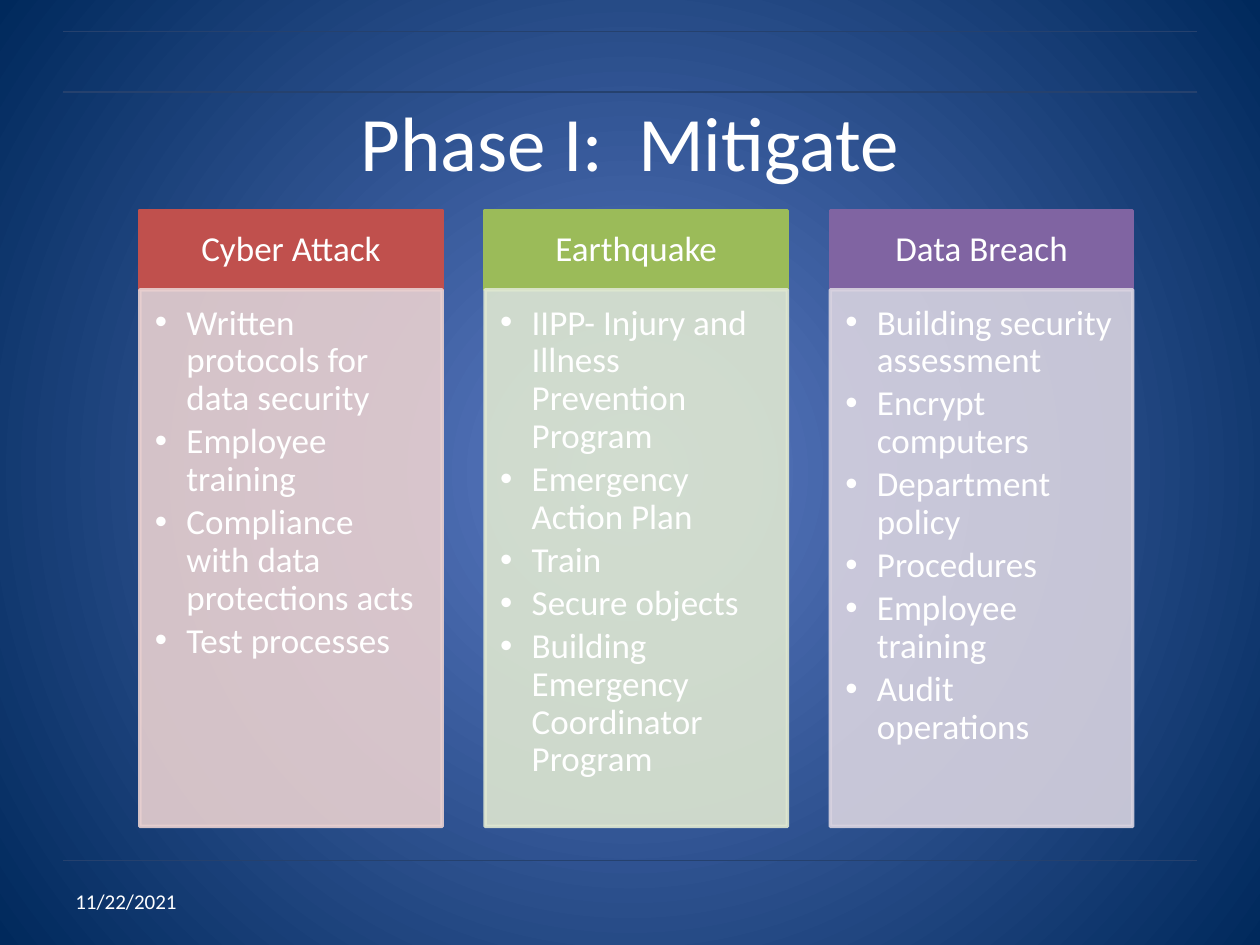
from lxml.etree import SubElement
from pptx import Presentation
from pptx.dml.color import RGBColor
from pptx.enum.shapes import MSO_CONNECTOR, MSO_SHAPE
from pptx.enum.text import MSO_ANCHOR, PP_ALIGN
from pptx.oxml.ns import qn
from pptx.util import Inches, Pt

WHITE = "FFFFFF"
RULE_COLOR = "25416E"
HAZARDS = [
    ("Cyber Attack", "C0504D", "E8D0D0", [
        "Written protocols for data security",
        "Employee training",
        "Compliance with data protections acts",
        "Test processes",
    ]),
    ("Earthquake", "9BBB59", "DEE7D1", [
        "IIPP- Injury and Illness Prevention Program",
        "Emergency Action Plan",
        "Train",
        "Secure objects",
        "Building Emergency Coordinator Program",
    ]),
    ("Data Breach", "8064A2", "D8D3E0", [
        "Building security assessment",
        "Encrypt computers",
        "Department policy",
        "Procedures",
        "Employee training",
        "Audit operations",
    ]),
]


def rgb(color):
    return RGBColor.from_string(color)


def set_font(paragraph, size):
    paragraph.font.name = "Calibri"
    paragraph.font.size = Pt(size)
    paragraph.font.color.rgb = rgb(WHITE)


def set_insets(frame, left, top, right, bottom):
    frame.margin_left, frame.margin_top = Inches(left), Inches(top)
    frame.margin_right, frame.margin_bottom = Inches(right), Inches(bottom)


def add_bullet(paragraph, indent):
    properties = paragraph._p.get_or_add_pPr()
    properties.set("marL", str(Inches(indent)))
    properties.set("indent", str(-Inches(indent)))
    SubElement(properties, qn("a:buFont"), typeface="Arial")
    SubElement(properties, qn("a:buChar"), char="•")


def paint_background(slide):
    fill = slide.background.fill
    fill.gradient()
    for stop, color in zip(fill.gradient_stops, ["5E7CC5", "00295C"]):
        stop.color.rgb = rgb(color)
    gradient = slide.element.find(".//" + qn("a:gradFill"))
    gradient.remove(gradient.find(qn("a:lin")))
    circle = SubElement(gradient, qn("a:path"), path="circle")
    SubElement(circle, qn("a:fillToRect"), l="50000", t="50000", r="50000", b="50000")


def add_rule(slide, left, top, width):
    rule = slide.shapes.add_connector(
        MSO_CONNECTOR.STRAIGHT, Inches(left), Inches(top), Inches(left + width), Inches(top))
    rule.line.color.rgb = rgb(RULE_COLOR)
    rule.line.width = Pt(0.75)
    SubElement(rule._element.spPr, qn("a:effectLst"))


def place_title(slide, left, top, width, height):
    title = slide.shapes.title
    title.left, title.top = Inches(left), Inches(top)
    title.width, title.height = Inches(width), Inches(height)
    frame = title.text_frame
    frame.text = "Phase I:  Mitigate"
    frame.vertical_anchor = MSO_ANCHOR.MIDDLE
    heading = frame.paragraphs[0]
    heading.alignment = PP_ALIGN.CENTER
    set_font(heading, 44)


def add_panel(slide, left, top, width, height, color, opacity=100):
    panel = slide.shapes.add_shape(
        MSO_SHAPE.RECTANGLE, Inches(left), Inches(top), Inches(width), Inches(height))
    panel.shadow.inherit = False
    panel.fill.solid()
    panel.fill.fore_color.rgb = rgb(color)
    panel.line.color.rgb = rgb(color)
    panel.line.width = Pt(2)
    if opacity < 100:
        for tone in panel._element.spPr.iter(qn("a:srgbClr")):
            SubElement(tone, qn("a:alpha"), val=str(opacity * 1000))
    panel.text_frame.word_wrap = True
    return panel.text_frame


def add_hazard(slide, left, top, width, height, hazard):
    name, strong, pale, measures = hazard
    header_height = 0.63

    header = add_panel(slide, left, top, width, header_height, strong)
    set_insets(header, 0.16, 0.09, 0.16, 0.09)
    header.vertical_anchor = MSO_ANCHOR.MIDDLE
    header.text = name
    header.paragraphs[0].alignment = PP_ALIGN.CENTER
    header.paragraphs[0].line_spacing = 0.9
    set_font(header.paragraphs[0], 20)

    body = add_panel(slide, left, top + header_height, width, height - header_height, pale, 90)
    set_insets(body, 0.12, 0.12, 0.16, 0.17)
    body.vertical_anchor = MSO_ANCHOR.TOP
    body.text = "\n".join(measures)
    for measure in body.paragraphs:
        measure.level = 1
        measure.alignment = PP_ALIGN.LEFT
        add_bullet(measure, 0.25)
        measure.line_spacing = 0.9
        measure.space_after = Pt(3)
        set_font(measure, 20)


def add_date(slide, left, top, width, height):
    date = slide.shapes.add_textbox(Inches(left), Inches(top), Inches(width), Inches(height))
    frame = date.text_frame
    frame.word_wrap = True
    frame.vertical_anchor = MSO_ANCHOR.MIDDLE
    frame.text = "11/22/2021"
    set_font(frame.paragraphs[0], 12)


def main():
    deck = Presentation()
    deck.slide_width, deck.slide_height = Inches(10), Inches(7.5)
    slide = deck.slides.add_slide(deck.slide_layouts[5])
    paint_background(slide)
    for top in (6.83, 0.25, 0.73):
        add_rule(slide, 0.5, top, 9)
    place_title(slide, 0.5, 0.49, 9, 1.25)
    for column, hazard in enumerate(HAZARDS):
        add_hazard(slide, 1.11 + column * 2.74, 1.67, 2.4, 4.89, hazard)
    add_date(slide, 0.5, 6.95, 2.33, 0.4)
    deck.save("out.pptx")


if __name__ == "__main__":
    main()
